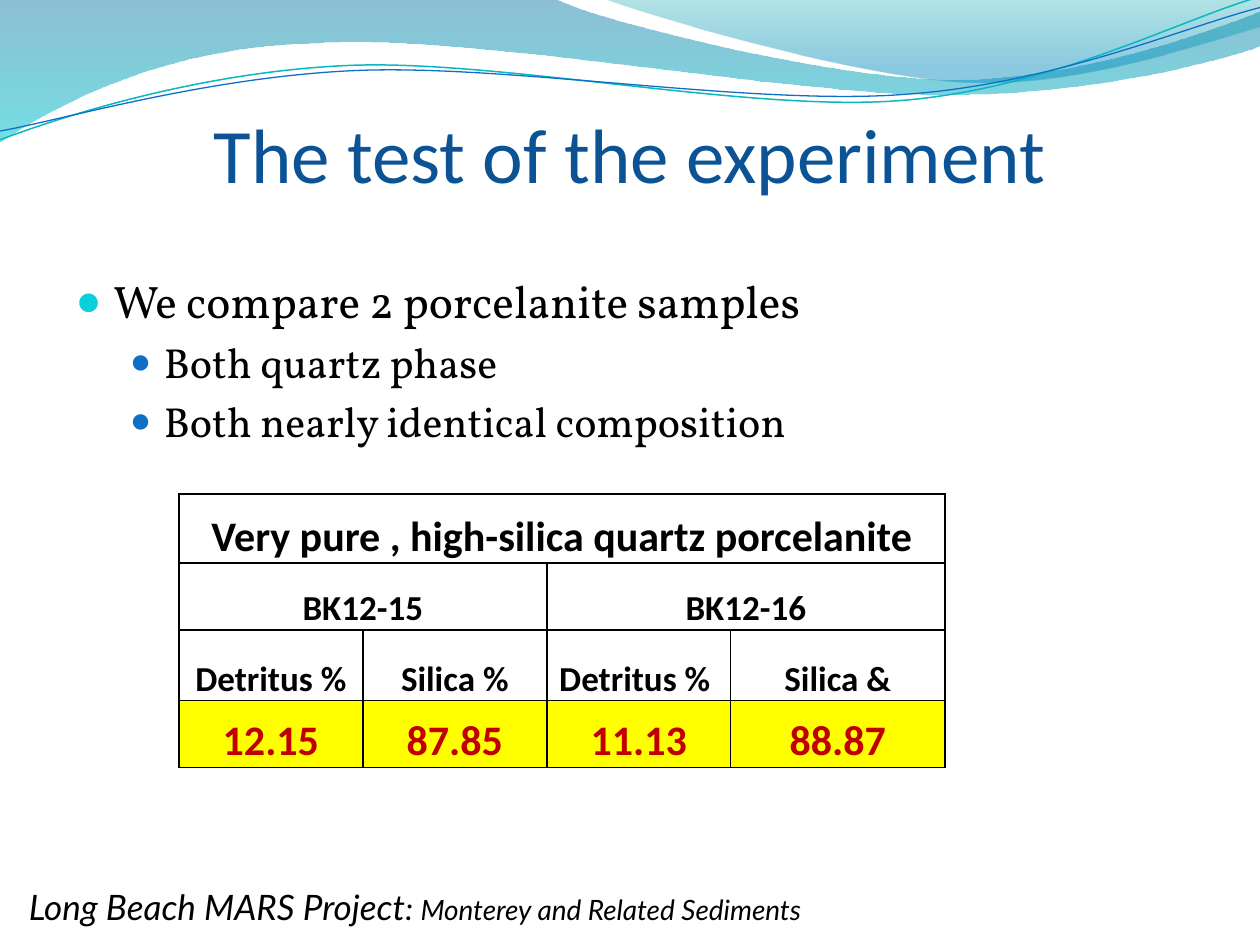
"""Build a slide comparing two porcelanite samples under a wave banner."""
from lxml import etree
from pptx import Presentation
from pptx.dml.color import RGBColor
from pptx.enum.text import MSO_ANCHOR, MSO_AUTO_SIZE, PP_ALIGN
from pptx.oxml.ns import qn
from pptx.util import Inches, Pt

BOTTOM, CENTER, NO_FIT = MSO_ANCHOR.BOTTOM, PP_ALIGN.CENTER, MSO_AUTO_SIZE.NONE
COLORS = {
    "title": "0B5394", "text": "000000", "value": "C00000", "highlight": "FFFF00",
    "aqua": "0BD0D9", "blue": "0F6FC6", "teal": "0AB8BF",
    "deep": "0074A1", "cyan": "00C6CF", "green": "00A1A9", "sky": "008BBF",
}
TITLE = "The test of the experiment"
BULLETS = [
    (0, "We compare 2 porcelanite samples"),
    (1, "Both quartz phase"),
    (1, "Both nearly identical composition"),
]
BULLET_LEVELS = [
    {"size": 26, "margin": 0.3, "hang": 0.3, "color": "aqua", "scale": 95},
    {"size": 24, "margin": 0.7, "hang": 0.27, "color": "blue", "scale": 85},
]
FOOTER = [("Long Beach MARS Project", 20), (": ", 18), ("Monterey and Related Sediments", 16)]
COLUMNS = [1.46, 1.46, 1.46, 1.7]
ROWS = [
    {"height": 0.55, "size": 24, "span": 4, "cells": ["Very pure , high-silica quartz porcelanite"]},
    {"height": 0.53, "size": 20, "span": 2, "cells": ["BK12-15", "BK12-16"]},
    {"height": 0.56, "size": 20, "span": 1, "cells": ["Detritus %", "Silica %", "Detritus % ", "Silica &"]},
    {"height": 0.53, "size": 24, "span": 1, "cells": ["12.15", "87.85", "11.13", "88.87"],
     "color": "value", "fill": "highlight"},
]
BANDS = [
    ([[(0, 0)], [(4.4, -0.01)],
      [(4.76, 0.17), (6.64, 0.63), (7.58, 0.63)], [(8.53, 0.63), (9.58, 0.26), (10, 0.09)],
      [(10.01, 0.36)],
      [(9.83, 0.44), (8.7, 0.76), (7.46, 0.75)], [(6.22, 0.75), (3.82, 0.28), (2.57, 0.34)],
      [(1.29, 0.36), (0.46, 0.83), (-0.01, 1.13)]],
     [(0, "deep", 45), (1, "cyan", 55)]),
    ([[(4.79, -0.01)],
      [(5.09, 0.11), (6.82, 0.62), (7.69, 0.65)], [(8.56, 0.69), (9.61, 0.32), (10, 0.21)],
      [(10, 0)]],
     [(0, "green", 30), (0.8, "sky", 45)]),
]
STRANDS = [
    ([[(0, 1.11)],
      [(0.48, 0.93), (1.58, 0.57), (2.77, 0.52)], [(3.95, 0.47), (5.93, 0.89), (7.13, 0.8)],
      [(8.33, 0.71), (9.38, 0.15), (9.98, -0.02)]], "teal", 0.85),
    ([[(0, 1.04)],
      [(0.47, 0.96), (1.64, 0.61), (2.83, 0.56)], [(4.03, 0.51), (5.97, 0.84), (7.17, 0.75)],
      [(8.36, 0.67), (9.41, 0.21), (10, 0.06)]], "blue", 0.75),
]


def rgb(name):
    return RGBColor.from_string(COLORS[name])


def add(parent, tag, **attributes):
    return etree.SubElement(parent, qn(tag), {key: str(value) for key, value in attributes.items()})


def place(shape, left, top, width, height):
    shape.left, shape.top = Inches(left), Inches(top)
    shape.width, shape.height = Inches(width), Inches(height)


def style(font, face, size, color, bold=None, italic=None):
    font.name, font.size, font.bold, font.italic = face, Pt(size), bold, italic
    font.color.rgb = rgb(color)


def add_wave(slide, segments, closed):
    start, *ends = [(Inches(x), Inches(y)) for x, y in (segment[-1] for segment in segments)]
    builder = slide.shapes.build_freeform(*start)
    builder.add_line_segments(ends, close=closed)
    wave = builder.convert_to_shape()
    wave.shadow.inherit = False
    steps = list(wave.element.spPr.iter(qn("a:lnTo")))
    for step, segment in zip(steps, segments[1:]):
        if len(segment) == 3:
            step.clear()
            step.tag = qn("a:cubicBezTo")
            for x, y in segment:
                add(step, "a:pt", x=Inches(x) - wave.left, y=Inches(y) - wave.top)
    return wave


def add_banner(slide):
    for segments, stops in BANDS:
        band = add_wave(slide, segments, True)
        band.line.fill.background()
        band.fill.gradient()
        band.fill.gradient_angle = 270
        for stop, (position, color, opacity) in zip(band.fill.gradient_stops, stops):
            stop.position = position
            stop.color.rgb = rgb(color)
            tint = next(stop._gs.iter(qn("a:srgbClr")))
            add(tint, "a:alpha", val=opacity * 1000)
    for segments, color, width in STRANDS:
        strand = add_wave(slide, segments, False)
        strand.fill.background()
        strand.line.color.rgb = rgb(color)
        strand.line.width = Pt(width)


def add_bullets(body):
    frame = body.text_frame
    frame.auto_size = NO_FIT
    for index, (level, text) in enumerate(BULLETS):
        look = BULLET_LEVELS[level]
        item = frame.paragraphs[0] if index == 0 else frame.add_paragraph()
        item.text, item.level = text, level
        if index == 0:
            item.space_before = Pt(0)
        properties = item._p.get_or_add_pPr()
        properties.set("marL", str(Inches(look["margin"])))
        properties.set("indent", str(-Inches(look["hang"])))
        add(add(properties, "a:buClr"), "a:srgbClr", val=COLORS[look["color"]])
        add(properties, "a:buSzPct", val=look["scale"] * 1000)
        add(properties, "a:buChar", char="●")
        style(item.font, "Vollkorn", look["size"], "text")


def format_cell(cell, row):
    cell.margin_left = cell.margin_right = cell.margin_top = Inches(0.01)
    cell.margin_bottom = 0
    cell.vertical_anchor = BOTTOM
    properties = cell._tc.get_or_add_tcPr()
    for side in ("a:lnL", "a:lnR", "a:lnT", "a:lnB"):
        border = add(properties, side, w=Pt(1))
        add(add(border, "a:solidFill"), "a:srgbClr", val=COLORS["text"])
    if "fill" in row:
        cell.fill.solid()
        cell.fill.fore_color.rgb = rgb(row["fill"])
    else:
        cell.fill.background()


def add_samples(slide):
    height = sum(row["height"] for row in ROWS)
    table = slide.shapes.add_table(len(ROWS), len(COLUMNS), Inches(1.42), Inches(3.92),
                                   Inches(sum(COLUMNS)), Inches(height)).table
    table.first_row = table.horz_banding = False
    for column, width in zip(table.columns, COLUMNS):
        column.width = Inches(width)
    for r, row in enumerate(ROWS):
        table.rows[r].height = Inches(row["height"])
        for c in range(len(COLUMNS)):
            format_cell(table.cell(r, c), row)
        for index, text in enumerate(row["cells"]):
            first = index * row["span"]
            cell = table.cell(r, first)
            if row["span"] > 1:
                cell.merge(table.cell(r, first + row["span"] - 1))
            cell.text = text
            label = cell.text_frame.paragraphs[0]
            label.alignment = CENTER
            style(label.font, "Calibri", row["size"], row.get("color", "text"), bold=True)


def main():
    deck = Presentation()
    deck.slide_width, deck.slide_height = Inches(10), Inches(7.5)
    slide = deck.slides.add_slide(deck.slide_layouts[1])
    title, body = slide.placeholders
    add_banner(slide)

    place(title, 0.5, 0.77, 9, 0.81)
    heading = title.text_frame
    heading.text = TITLE
    heading.auto_size, heading.vertical_anchor = NO_FIT, BOTTOM
    heading.margin_left = heading.margin_right = heading.margin_bottom = 0
    heading.paragraphs[0].alignment = CENTER
    style(heading.paragraphs[0].font, "Calibri", 44, "title")

    place(body, 0.5, 2.12, 9, 4.8)
    add_bullets(body)
    add_samples(slide)

    footer = slide.shapes.add_textbox(Inches(0.13), Inches(6.98), Inches(7.51), Inches(0.44))
    for text, size in FOOTER:
        run = footer.text_frame.paragraphs[0].add_run()
        run.text = text
        style(run.font, "Lato", size, "text", italic=True)
    deck.save("out.pptx")


if __name__ == "__main__":
    main()
